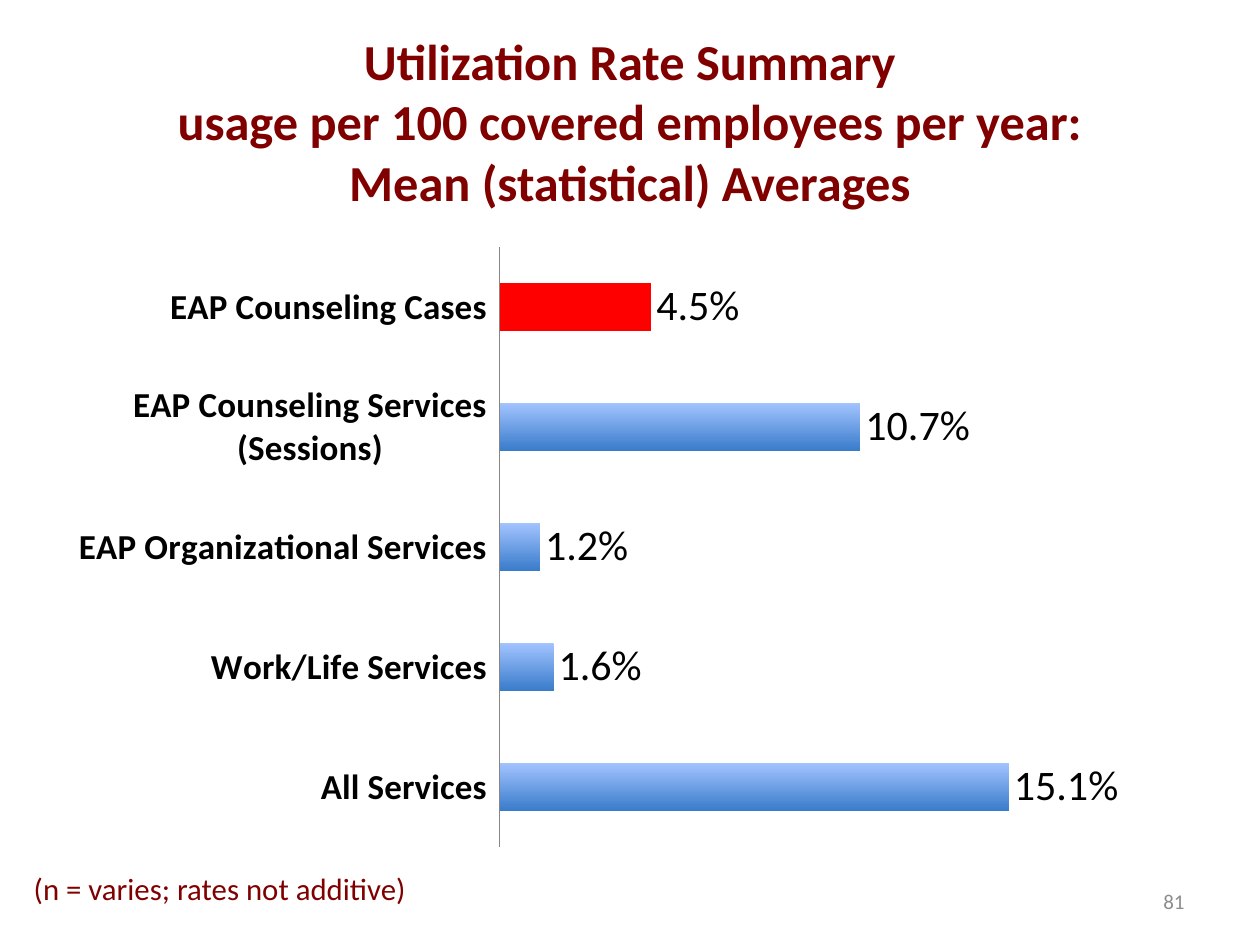
from pptx import Presentation
from pptx.chart.data import CategoryChartData
from pptx.dml.color import RGBColor
from pptx.enum.chart import XL_CHART_TYPE as ChartType, XL_LABEL_POSITION as LabelPos
from pptx.enum.chart import XL_TICK_LABEL_POSITION as TickLabels, XL_TICK_MARK as Tick
from pptx.enum.text import MSO_ANCHOR as Anchor, MSO_AUTO_SIZE as AutoSize, PP_ALIGN as Align
from pptx.oxml import parse_xml
from pptx.oxml.ns import nsdecls
from pptx.util import Cm, Pt

TITLE = [
    "Utilization Rate Summary",
    "usage per 100 covered employees per year:",
    "Mean (statistical) Averages",
]
RATES = [
    ("All Services", 0.151),
    ("Work/Life Services", 0.016),
    ("EAP Organizational Services", 0.012),
    ("EAP Counseling Services (Sessions)", 0.107),
    ("EAP Counseling Cases", 0.045),
]
HIGHLIGHT = "EAP Counseling Cases"
FOOTNOTE = "(n = varies; rates not additive)"
PAGE = "81"

FONT = "Calibri"
MAROON = RGBColor(0x80, 0, 0)
GRAY = RGBColor(0x8C, 0x8C, 0x8C)
AXIS_GRAY = RGBColor(0x86, 0x86, 0x86)
BLACK = RGBColor(0, 0, 0)
RED = RGBColor(0xFF, 0, 0)
BAR_TOP = RGBColor(0xA3, 0xC4, 0xFF)
BAR_BOTTOM = RGBColor(0x3A, 0x7C, 0xCB)
PLOT = {"x": 0.385, "y": 0.018, "w": 0.595, "h": 0.962}


def style(font, size, color, bold=False):
    font.name = FONT
    font.size = Pt(size)
    font.bold = bold
    font.color.rgb = color


def write(shape, text, size, color, align, bold=False):
    frame = shape.text_frame
    frame.text = text
    frame.word_wrap = True
    frame.auto_size = AutoSize.NONE
    frame.vertical_anchor = Anchor.MIDDLE
    paragraph = frame.paragraphs[0]
    paragraph.alignment = align
    style(paragraph.font, size, color, bold)


def add_rates_chart(slide):
    data = CategoryChartData(number_format="0.0%")
    data.categories = [service for service, _ in RATES]
    data.add_series("Series 1", [rate for _, rate in RATES])
    chart = slide.shapes.add_chart(
        ChartType.BAR_CLUSTERED, Cm(1.27), Cm(4.75), Cm(22.86), Cm(12.57), data
    ).chart
    chart.has_legend = False
    chart.has_title = False
    style(chart.font, 18, BLACK)

    services = chart.category_axis
    services.major_tick_mark = services.minor_tick_mark = Tick.NONE
    services.tick_label_position = TickLabels.LOW
    services.format.line.color.rgb = AXIS_GRAY
    style(services.tick_labels.font, 20, BLACK, bold=True)

    scale = chart.value_axis
    scale.minimum_scale, scale.maximum_scale = 0, 0.2
    scale.has_major_gridlines = False
    scale.visible = False

    plot = chart.plots[0]
    plot.gap_width = 150
    plot.overlap = -25
    plot.vary_by_categories = False
    plot.has_data_labels = True
    labels = plot.data_labels
    labels.show_value = True
    labels.number_format = "0.0%"
    labels.number_format_is_linked = False
    labels.position = LabelPos.OUTSIDE_END
    style(labels.font, 24, BLACK)

    bars = plot.series[0]
    bars.invert_if_negative = False
    bars.format.fill.gradient()
    bars.format.fill.gradient_angle = 270
    for stop, color in zip(bars.format.fill.gradient_stops, (BAR_TOP, BAR_BOTTOM)):
        stop.color.rgb = color
    highlighted = [service for service, _ in RATES].index(HIGHLIGHT)
    fill = bars.points[highlighted].format.fill
    fill.solid()
    fill.fore_color.rgb = RED

    parts = "".join(f'<c:{part} val="{value}"/>' for part, value in PLOT.items())
    layout = parse_xml(
        f'<c:layout {nsdecls("c")}><c:manualLayout><c:layoutTarget val="inner"/>'
        f'<c:xMode val="edge"/><c:yMode val="edge"/>{parts}</c:manualLayout></c:layout>'
    )
    area = chart.element.chart.plotArea
    for automatic in area.xpath("c:layout"):
        area.remove(automatic)
    area.insert(0, layout)


def main():
    deck = Presentation()
    deck.slide_width, deck.slide_height = Cm(25.4), Cm(19.05)
    slide = deck.slides.add_slide(deck.slide_layouts[5])

    title = slide.shapes.title
    title.left, title.top, title.width, title.height = Cm(1.27), Cm(0.84), Cm(22.86), Cm(3.18)
    write(title, "\v".join(TITLE), 28.8, MAROON, Align.CENTER, bold=True)

    add_rates_chart(slide)

    footnote = slide.shapes.add_textbox(Cm(0.43), Cm(17.15), Cm(10.16), Cm(1.52))
    write(footnote, FOOTNOTE, 17.6, MAROON, Align.LEFT)
    page = slide.shapes.add_textbox(Cm(18.21), Cm(17.65), Cm(5.92), Cm(1.02))
    write(page, PAGE, 12, GRAY, Align.RIGHT)

    deck.save("out.pptx")


if __name__ == "__main__":
    main()
